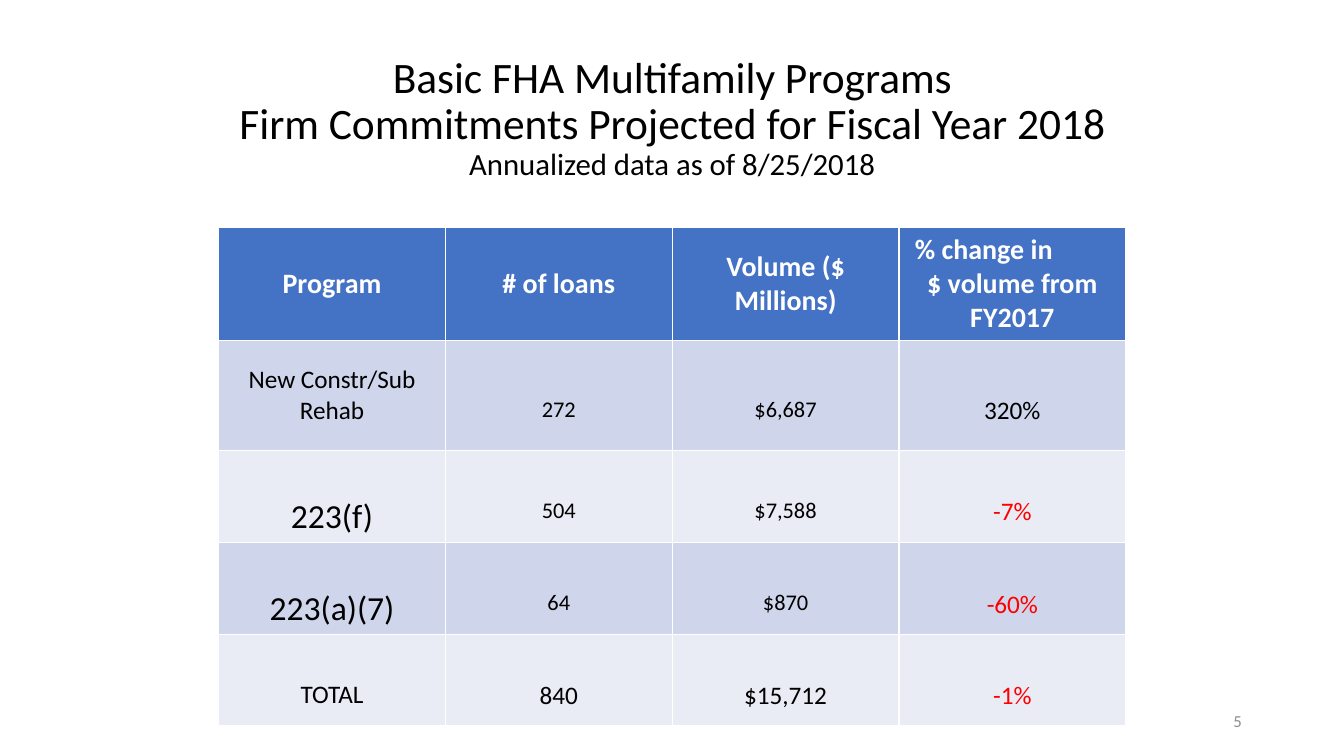
"""Build the slide on projected FHA multifamily firm commitments."""
from pptx import Presentation
from pptx.dml.color import RGBColor
from pptx.enum.text import MSO_ANCHOR as Anchor, MSO_AUTO_SIZE as AutoSize, PP_ALIGN as Align
from pptx.util import Cm, Pt

TITLE_LINES = [
    ("Basic FHA Multifamily Programs", 31),
    ("Firm Commitments Projected for Fiscal Year 2018", 31),
    ("Annualized data as of 8/25/2018", 22),
]
HEADINGS = ["Program", "# of loans", "Volume ($ Millions)", "% change in\n$ volume from FY2017"]
PROGRAMS = [
    ("New Constr/Sub Rehab", "272", "$6,687", "320%"),
    ("223(f)", "504", "$7,588", "-7%"),
    ("223(a)(7)", "64", "$870", "-60%"),
    ("TOTAL", "840", "$15,712", "-1%"),
]
SIZES = [(18, 16, 16, 18), (24, 16, 16, 18), (24, 16, 16, 18), (18, 18, 18, 18)]
PAGE_NUMBER = "5"

FONT = "Calibri"
COLORS = {
    "header": "4472C4", "odd": "CFD5EA", "even": "E9EBF5",
    "white": "FFFFFF", "text": "000000", "loss": "FF0000", "page": "8C8C8C",
}
LEFT, WIDTH = Cm(5.51), Cm(22.86)
ROW_HEIGHTS = [Cm(2.49), Cm(2.77), Cm(1.93), Cm(1.93), Cm(2.29)]


def rgb(name):
    return RGBColor.from_string(COLORS[name])


def style(paragraph, size, color, align=Align.CENTER, bold=False, spacing=None):
    paragraph.alignment = align
    paragraph.line_spacing = spacing
    font = paragraph.font
    font.name, font.size, font.bold = FONT, Pt(size), bold
    font.color.rgb = rgb(color)


def fill_cell(cell, text, fill, **look):
    cell.fill.solid()
    cell.fill.fore_color.rgb = rgb(fill)
    cell.vertical_anchor = Anchor.MIDDLE
    cell.text = text
    for paragraph in cell.text_frame.paragraphs:
        style(paragraph, **look)


def add_title(slide):
    title = slide.shapes.title
    title.left, title.top, title.width, title.height = LEFT, Cm(1.02), WIDTH, Cm(3.96)
    frame = title.text_frame
    frame.auto_size = AutoSize.NONE
    frame.vertical_anchor = Anchor.MIDDLE
    heading = frame.paragraphs[0]
    style(heading, TITLE_LINES[0][1], "text", spacing=0.9)
    for index, (line, size) in enumerate(TITLE_LINES):
        if index:
            heading.add_line_break()
        run = heading.add_run()
        run.text = line
        run.font.size = Pt(size)


def add_program_table(slide):
    table = slide.shapes.add_table(
        len(ROW_HEIGHTS), len(HEADINGS), LEFT, Cm(5.73), WIDTH, sum(ROW_HEIGHTS)).table
    for row, height in zip(table.rows, ROW_HEIGHTS):
        row.height = height
    for col, heading in enumerate(HEADINGS):
        fill_cell(table.cell(0, col), heading, "header", size=20, color="white", bold=True)
    change_heading = table.cell(0, len(HEADINGS) - 1)
    change_heading.text_frame.paragraphs[0].alignment = Align.LEFT
    change_heading.margin_left = change_heading.margin_right = Cm(0.4)

    for row, (program, sizes) in enumerate(zip(PROGRAMS, SIZES), start=1):
        for col, (value, size) in enumerate(zip(program, sizes)):
            cell = table.cell(row, col)
            fill_cell(cell, value, "odd" if row % 2 else "even", size=size,
                      color="loss" if value.startswith("-") else "text",
                      spacing=None if row == 1 and col == 0 else 2.0)
            if col:
                cell.margin_left = cell.margin_top = cell.margin_right = Cm(0.03)
                cell.margin_bottom = 0


def add_page_number(slide):
    frame = slide.shapes.add_textbox(Cm(23.93), Cm(17.65), Cm(7.62), Cm(1.02)).text_frame
    frame.word_wrap = True
    frame.vertical_anchor = Anchor.MIDDLE
    frame.text = PAGE_NUMBER
    style(frame.paragraphs[0], 12, "page", Align.RIGHT)


def main():
    deck = Presentation()
    deck.slide_width, deck.slide_height = Cm(33.87), Cm(19.05)
    slide = deck.slides.add_slide(deck.slide_layouts.get_by_name("Title Only"))
    add_title(slide)
    add_program_table(slide)
    add_page_number(slide)
    deck.save("out.pptx")


if __name__ == "__main__":
    main()
